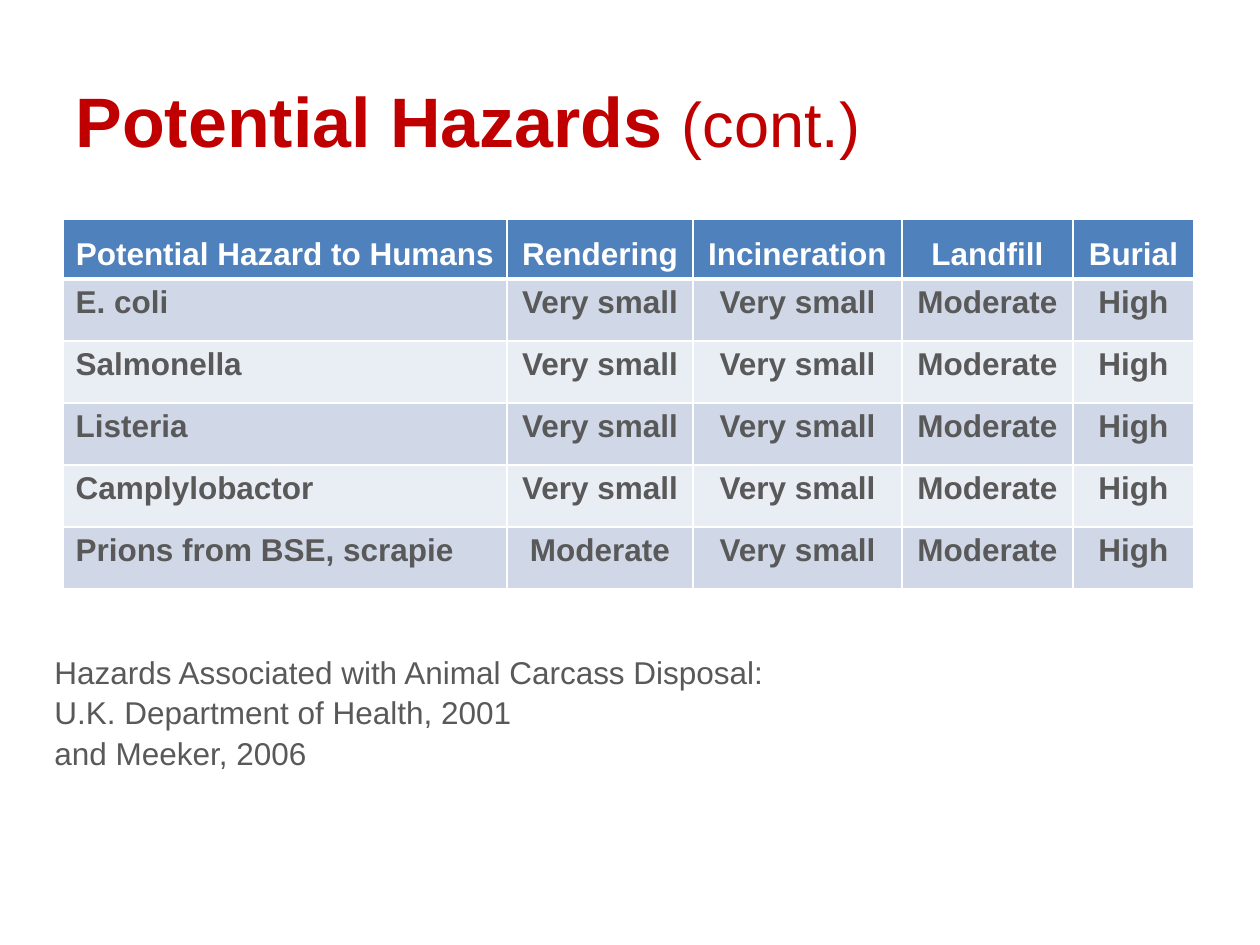
from typing import NamedTuple

from lxml.etree import SubElement
from pptx import Presentation
from pptx.dml.color import RGBColor
from pptx.enum.text import MSO_ANCHOR, MSO_AUTO_SIZE, PP_ALIGN
from pptx.oxml.ns import qn
from pptx.util import Emu, Pt

RED = RGBColor(0xC0, 0x00, 0x00)
GREY = RGBColor(0x59, 0x59, 0x59)
WHITE = RGBColor(0xFF, 0xFF, 0xFF)
BLUE = RGBColor(0x4F, 0x81, 0xBD)
BANDS = (RGBColor(0xD0, 0xD8, 0xE8), RGBColor(0xE9, 0xED, 0xF4))
FONT = "Arial"
PX_PER_INCH = 126


class Box(NamedTuple):
    left: int
    top: int
    width: int
    height: int


class Hazard(NamedTuple):
    name: str
    rendering: str = "Very small"
    incineration: str = "Very small"
    landfill: str = "Moderate"
    burial: str = "High"


HEADER = Hazard("Potential Hazard to Humans", "Rendering", "Incineration", "Landfill", "Burial")
HAZARDS = [
    Hazard("E. coli"),
    Hazard("Salmonella"),
    Hazard("Listeria"),
    Hazard("Camplylobactor"),
    Hazard("Prions from BSE, scrapie", rendering="Moderate"),
]
COL_WIDTHS = (444, 186, 209, 171, 121)
HEADER_HEIGHT, ROW_HEIGHT = 60, 62
SOURCES = [
    "Hazards Associated with Animal Carcass Disposal:",
    "U.K. Department of Health, 2001",
    "and Meeker, 2006",
]


def px(n: int) -> Emu:
    return Emu(round(n * 914400 / PX_PER_INCH))


def place(sp, box: Box) -> None:
    sp.left, sp.top, sp.width, sp.height = map(px, box)


def style(r, size: int, color: RGBColor, bold: bool = False) -> None:
    r.font.name = FONT
    r.font.size = Pt(size)
    r.font.bold = bold
    r.font.color.rgb = color


def set_borders(cell, bottom: int) -> None:
    tcPr = cell._tc.get_or_add_tcPr()
    widths = {"a:lnL": 1, "a:lnR": 1, "a:lnT": 1, "a:lnB": bottom}
    for i, (tag, width) in enumerate(widths.items()):
        ln = SubElement(tcPr, qn(tag), w=str(Pt(width)))
        fill = SubElement(ln, qn("a:solidFill"))
        SubElement(fill, qn("a:srgbClr"), val=str(WHITE))
        tcPr.insert(i, ln)  # borders come before the fill


def add_title(slide, box: Box) -> None:
    sp = slide.shapes.title
    place(sp, box)
    tf = sp.text_frame
    tf.auto_size = MSO_AUTO_SIZE.NONE
    tf.vertical_anchor = MSO_ANCHOR.BOTTOM
    p = tf.paragraphs[0]
    p.alignment = PP_ALIGN.LEFT
    for text, size, bold in (("Potential Hazards ", 40, True), ("(cont.)", 36, False)):
        r = p.add_run()
        r.text = text
        style(r, size, RED, bold)


def add_sources(slide, box: Box) -> None:
    tf = slide.shapes.add_textbox(*map(px, box)).text_frame
    tf.word_wrap = True
    tf.text = "\n".join(SOURCES)
    for i, p in enumerate(tf.paragraphs):
        p.line_spacing = 0.9
        p.space_before = Pt(3.7 if i else 0)
        style(p.runs[0], 18, GREY)


def add_hazard_table(slide, left: int, top: int) -> None:
    rows = [HEADER, *HAZARDS]
    box = Box(left, top, sum(COL_WIDTHS), HEADER_HEIGHT + ROW_HEIGHT * len(HAZARDS))
    table = slide.shapes.add_table(len(rows), len(COL_WIDTHS), *map(px, box)).table
    for col, width in zip(table.columns, COL_WIDTHS):
        col.width = px(width)
    for i, values in enumerate(rows):
        is_header = i == 0
        table.rows[i].height = px(HEADER_HEIGHT if is_header else ROW_HEIGHT)
        for j, text in enumerate(values):
            cell = table.cell(i, j)
            cell.text = text
            cell.vertical_anchor = MSO_ANCHOR.BOTTOM if is_header else MSO_ANCHOR.TOP
            cell.fill.solid()
            cell.fill.fore_color.rgb = BLUE if is_header else BANDS[(i - 1) % 2]
            set_borders(cell, bottom=3 if is_header else 1)
            p = cell.text_frame.paragraphs[0]
            p.alignment = PP_ALIGN.CENTER if is_header or j else PP_ALIGN.LEFT
            style(p.runs[0], 18, WHITE if is_header else GREY, bold=True)


def main() -> None:
    prs = Presentation()
    prs.slide_width, prs.slide_height = px(1260), px(945)
    slide = prs.slides.add_slide(prs.slide_layouts[5])  # title only

    add_title(slide, Box(63, 53, 1134, 115))
    add_sources(slide, Box(42, 651, 1260, 131))
    add_hazard_table(slide, 63, 219)

    prs.save("out.pptx")


if __name__ == "__main__":
    main()
